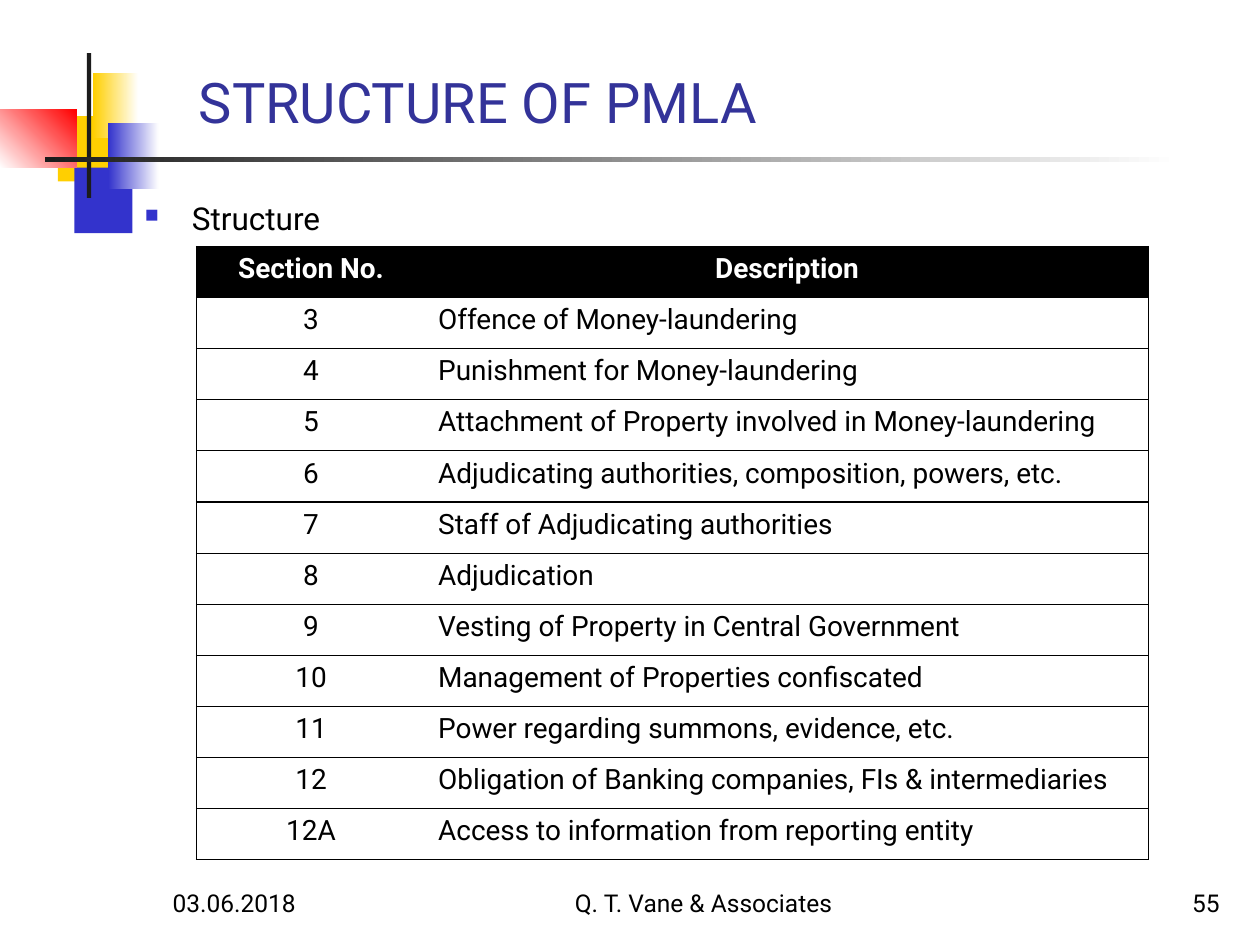
"""Build the slide that lists the sections of the PMLA."""
import dataclasses
import typing

import lxml.etree
import pptx
import pptx.dml.color
import pptx.enum.shapes
import pptx.enum.text
import pptx.oxml.ns
import pptx.util

Cm = pptx.util.Cm
Pt = pptx.util.Pt
qn = pptx.oxml.ns.qn
Align = pptx.enum.text.PP_ALIGN
Anchor = pptx.enum.text.MSO_ANCHOR

FONT = "Roboto"
COLORS = {
    "yellow": "FFCF01",
    "blue": "3333CC",
    "red": "FF0000",
    "dark": "1C1C1C",
    "title": "333399",
    "white": "FFFFFF",
    "black": "000000",
}
SECTIONS = [
    ("3", "Offence of Money-laundering"),
    ("4", "Punishment for Money-laundering"),
    ("5", "Attachment of Property involved in Money-laundering"),
    ("6", "Adjudicating authorities, composition, powers, etc."),
    ("7", "Staff of Adjudicating authorities"),
    ("8", "Adjudication"),
    ("9", "Vesting of Property in Central Government"),
    ("10", "Management of Properties confiscated"),
    ("11", "Power regarding summons, evidence, etc."),
    ("12", "Obligation of Banking companies, FIs & intermediaries"),
    ("12A", "Access to information from reporting entity"),
]
COLUMN_WIDTHS = (4.62, 14.57)
ROW_HEIGHT = 1.03


@dataclasses.dataclass
class Block:
    left: float
    top: float
    width: float
    height: float
    color: str
    fade_to: str = ""
    angle: int = 0


@dataclasses.dataclass
class Label:
    text: str
    left: float
    top: float
    width: float
    height: float
    size: int
    color: str = "black"
    align: Align = Align.LEFT
    anchor: Anchor = Anchor.BOTTOM


BLOCKS = [
    Block(1.17, 2.34, 1.22, 1.32, "yellow"),
    Block(1.5, 3.38, 1.17, 1.32, "blue"),
    Block(1.88, 1.47, 0.91, 1.32, "yellow", "white"),
    Block(2.18, 2.49, 1.02, 1.32, "blue", "white"),
    Block(0, 2.21, 1.55, 1.17, "white", "red", 45),
    Block(1.75, 1.07, 0.09, 2.92, "dark"),
    Block(0.91, 3.17, 22.86, 0.09, "dark", "white"),
]
LABELS = [
    Label("STRUCTURE OF PMLA", 3.76, 1.27, 21.64, 1.57, 32, "title"),
    Label("03.06.2018", 3.23, 17.35, 5.28, 1.27, 14),
    Label("Q. T. Vane & Associates", 10.16, 17.35, 8.05, 1.27, 14, align=Align.CENTER),
    Label("55", 19.56, 17.35, 5.28, 1.27, 14, align=Align.RIGHT),
]
BODY = Label("Structure", 2.67, 3.89, 21.59, 13.59, 18, anchor=Anchor.TOP)


def apply(target: typing.Any, formats: dict[str, typing.Any]) -> None:
    """Set every named attribute on the target."""
    for name, value in formats.items():
        setattr(target, name, value)


def rgb(color: str) -> pptx.dml.color.RGBColor:
    """Look up a colour by its name."""
    return pptx.dml.color.RGBColor.from_string(COLORS[color])


def write(para: typing.Any, text: str, size: int, color: str, align: Align, bold: bool = False) -> None:
    """Put one formatted run in a paragraph."""
    para.alignment = align
    span = para.add_run()
    span.text = text
    apply(span.font, {"name": FONT, "size": Pt(size), "bold": bold})
    span.font.color.rgb = rgb(color)


def draw_block(page: typing.Any, block: Block) -> None:
    """Draw a plain or fading rectangle."""
    box = page.shapes.add_shape(
        pptx.enum.shapes.MSO_SHAPE.RECTANGLE,
        Cm(block.left), Cm(block.top), Cm(block.width), Cm(block.height),
    )
    box.shadow.inherit = False
    box.line.fill.background()
    if block.fade_to:
        box.fill.gradient()
        box.fill.gradient_angle = block.angle
        for stop, color in zip(box.fill.gradient_stops, (block.color, block.fade_to)):
            stop.color.rgb = rgb(color)
    else:
        box.fill.solid()
        box.fill.fore_color.rgb = rgb(block.color)


def draw_label(page: typing.Any, label: Label) -> typing.Any:
    """Draw a text box and return its paragraph."""
    box = page.shapes.add_textbox(
        Cm(label.left), Cm(label.top), Cm(label.width), Cm(label.height)
    )
    apply(box.text_frame, {"word_wrap": True, "vertical_anchor": label.anchor})
    para = box.text_frame.paragraphs[0]
    write(para, label.text, label.size, label.color, label.align)
    return para


def add_bullet(para: typing.Any) -> None:
    """Give a paragraph a small square bullet with a hanging indent."""
    para.space_before = Pt(2)
    props = para._p.get_or_add_pPr()
    props.set("marL", str(Cm(0.95)))
    props.set("indent", str(-Cm(0.95)))
    color = lxml.etree.SubElement(props, qn("a:buClr"))
    lxml.etree.SubElement(color, qn("a:srgbClr"), val=COLORS["blue"])
    lxml.etree.SubElement(props, qn("a:buSzPct"), val="60000")
    lxml.etree.SubElement(props, qn("a:buChar"), char="■")


def add_borders(cell: typing.Any, sides: str) -> None:
    """Rule the named sides of a cell and clear the others."""
    props = cell._tc.get_or_add_tcPr()
    for side in "LRTB":
        line = lxml.etree.SubElement(props, qn(f"a:ln{side}"), w=str(Pt(0.75)))
        if side in sides:
            fill = lxml.etree.SubElement(line, qn("a:solidFill"))
            lxml.etree.SubElement(fill, qn("a:srgbClr"), val=COLORS["black"])
        else:
            lxml.etree.SubElement(line, qn("a:noFill"))


def draw_table(page: typing.Any) -> None:
    """Draw the table of sections."""
    rows = [("Section No.", "Description"), *SECTIONS]
    table = page.shapes.add_table(
        len(rows), len(COLUMN_WIDTHS), Cm(3.96), Cm(4.97),
        Cm(sum(COLUMN_WIDTHS)), Cm(ROW_HEIGHT * len(rows)),
    ).table
    apply(table, {"first_row": False, "horz_banding": False})
    for column, width in zip(table.columns, COLUMN_WIDTHS):
        column.width = Cm(width)
    for r, texts in enumerate(rows):
        table.rows[r].height = Cm(ROW_HEIGHT)
        header = r == 0
        for c, text in enumerate(texts):
            cell = table.cell(r, c)
            add_borders(cell, "LTB" if c == 0 else "RTB")
            cell.fill.solid()
            cell.fill.fore_color.rgb = rgb("black" if header else "white")
            align = Align.CENTER if header or c == 0 else Align.LEFT
            color = "white" if header else "black"
            write(cell.text_frame.paragraphs[0], text, 16, color, align, header)


def main() -> None:
    """Build and save the deck."""
    deck = pptx.Presentation()
    apply(deck, {"slide_width": Cm(25.4), "slide_height": Cm(19.05)})
    page = deck.slides.add_slide(deck.slide_layouts[6])
    for block in BLOCKS:
        draw_block(page, block)
    add_bullet(draw_label(page, BODY))
    for label in LABELS:
        draw_label(page, label)
    draw_table(page)
    deck.save("out.pptx")


if __name__ == "__main__":
    main()
